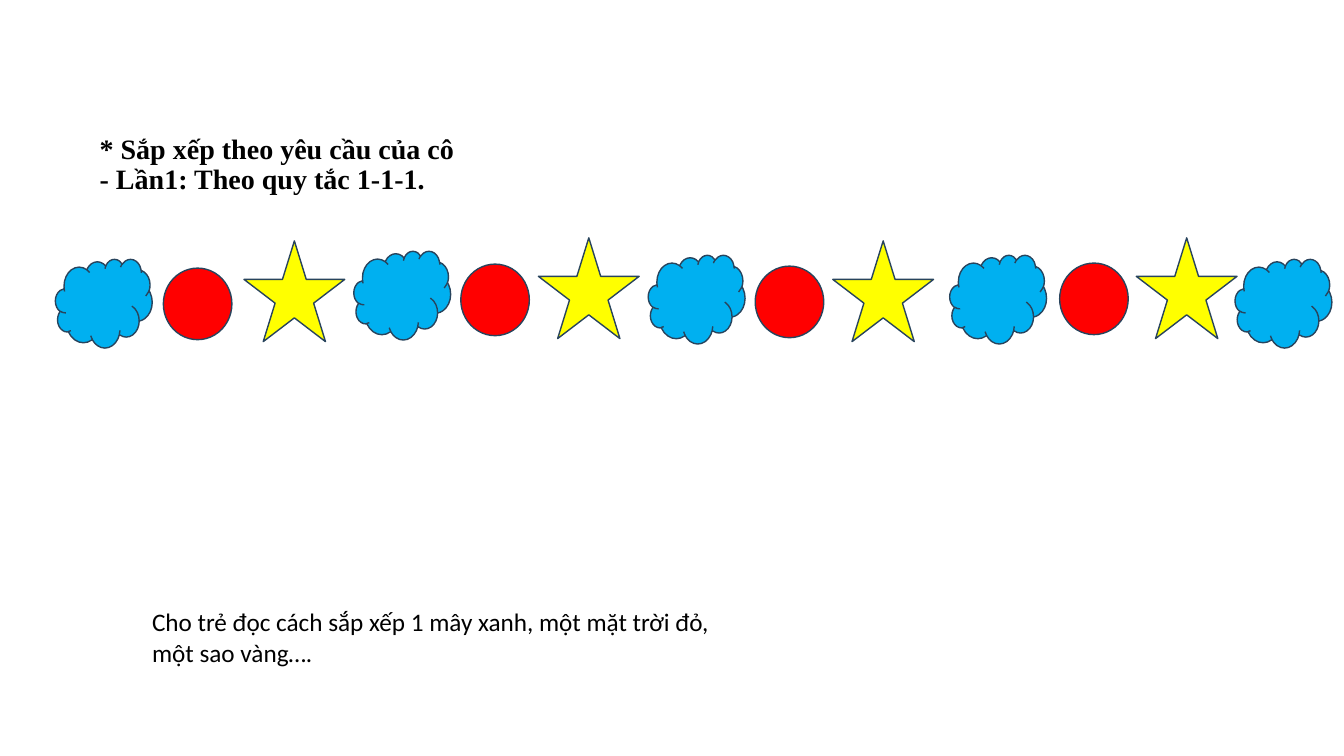
from dataclasses import dataclass

from pptx import Presentation
from pptx.dml.color import RGBColor
from pptx.enum.shapes import MSO_SHAPE
from pptx.enum.text import MSO_ANCHOR
from pptx.slide import Slide
from pptx.util import Inches, Pt

CLOUD = MSO_SHAPE.CLOUD
CIRCLE = MSO_SHAPE.FLOWCHART_CONNECTOR
STAR = MSO_SHAPE.STAR_5_POINT
TOP = MSO_ANCHOR.TOP

COLORS = {
    "text": "000000",
    "cloud": "00B0F0",
    "sun": "FF0000",
    "star": "FFFF00",
    "outline": "28445D",
}


@dataclass(frozen=True)
class Figure:
    """A kind of figure in the pattern, with its (left, top) places in inches."""
    preset: MSO_SHAPE
    color: str
    width: float
    height: float
    places: tuple[tuple[float, float], ...]


FIGURES = (
    Figure(STAR, "star", 1, 1,
           ((2.42, 2.39), (5.34, 2.36), (8.26, 2.39), (11.27, 2.36))),
    Figure(CIRCLE, "sun", 0.68, 0.71,
           ((1.62, 2.66), (4.57, 2.62), (7.49, 2.64), (10.51, 2.61))),
    Figure(CLOUD, "cloud", 0.96, 0.88,
           ((0.55, 2.57), (3.51, 2.49), (6.43, 2.53), (9.42, 2.53), (12.25, 2.57))),
)


def rgb(name: str) -> RGBColor:
    return RGBColor.from_string(COLORS[name])


def add_text(slide: Slide, text: str, left: float, top: float, width: float,
             height: float, *, font: str, size: float, bold: bool = False,
             line_spacing: float = 1.0, margin_top: float = 0.05) -> None:
    """Add a wrapped text box; a vertical tab in the text is a line break."""
    box = slide.shapes.add_textbox(Inches(left), Inches(top), Inches(width), Inches(height))
    frame = box.text_frame
    frame.word_wrap = True
    frame.vertical_anchor = TOP
    frame.margin_top = Inches(margin_top)
    paragraph = frame.paragraphs[0]
    paragraph.text = text
    paragraph.line_spacing = line_spacing
    for run in paragraph.runs:
        run.font.name = font
        run.font.size = Pt(size)
        run.font.bold = bold
        run.font.color.rgb = rgb("text")


def add_figures(slide: Slide, figure: Figure) -> None:
    for left, top in figure.places:
        shape = slide.shapes.add_shape(figure.preset, Inches(left), Inches(top),
                                       Inches(figure.width), Inches(figure.height))
        shape.shadow.inherit = False
        shape.fill.solid()
        shape.fill.fore_color.rgb = rgb(figure.color)
        shape.line.color.rgb = rgb("outline")
        shape.line.width = Pt(1)


def main() -> None:
    presentation = Presentation()
    presentation.slide_width = Inches(13.33)
    presentation.slide_height = Inches(7.5)
    slide = presentation.slides.add_slide(presentation.slide_layouts[6])

    add_text(slide, "* Sắp xếp theo yêu cầu của cô\v- Lần1: Theo quy tắc 1-1-1.",
             0.89, 1.07, 11.03, 1.43, font="Times New Roman", size=20, bold=True,
             line_spacing=0.9, margin_top=0.27)
    add_text(slide, "Cho trẻ đọc cách sắp xếp 1 mây xanh, một mặt trời đỏ, một sao vàng….",
             1.41, 5.97, 5.73, 0.71, font="Calibri", size=18)
    for figure in FIGURES:
        add_figures(slide, figure)

    presentation.save("out.pptx")


if __name__ == "__main__":
    main()
